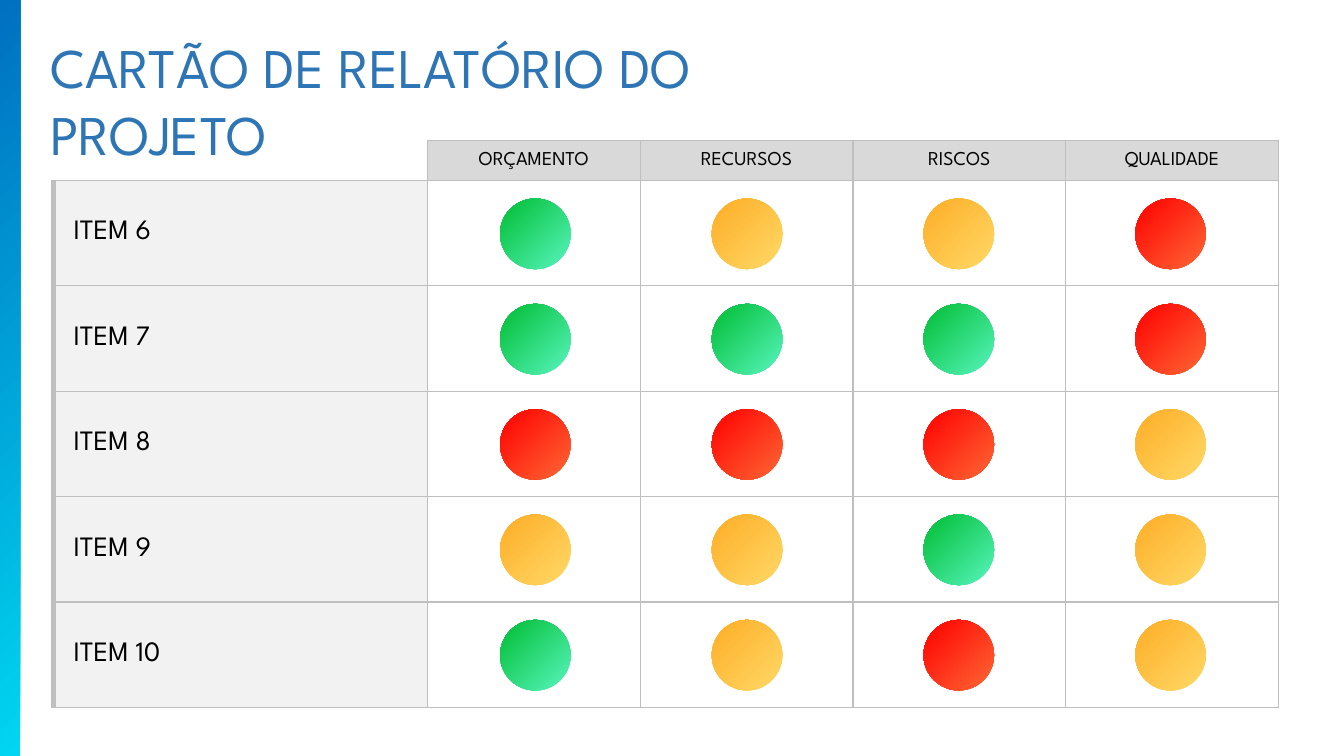
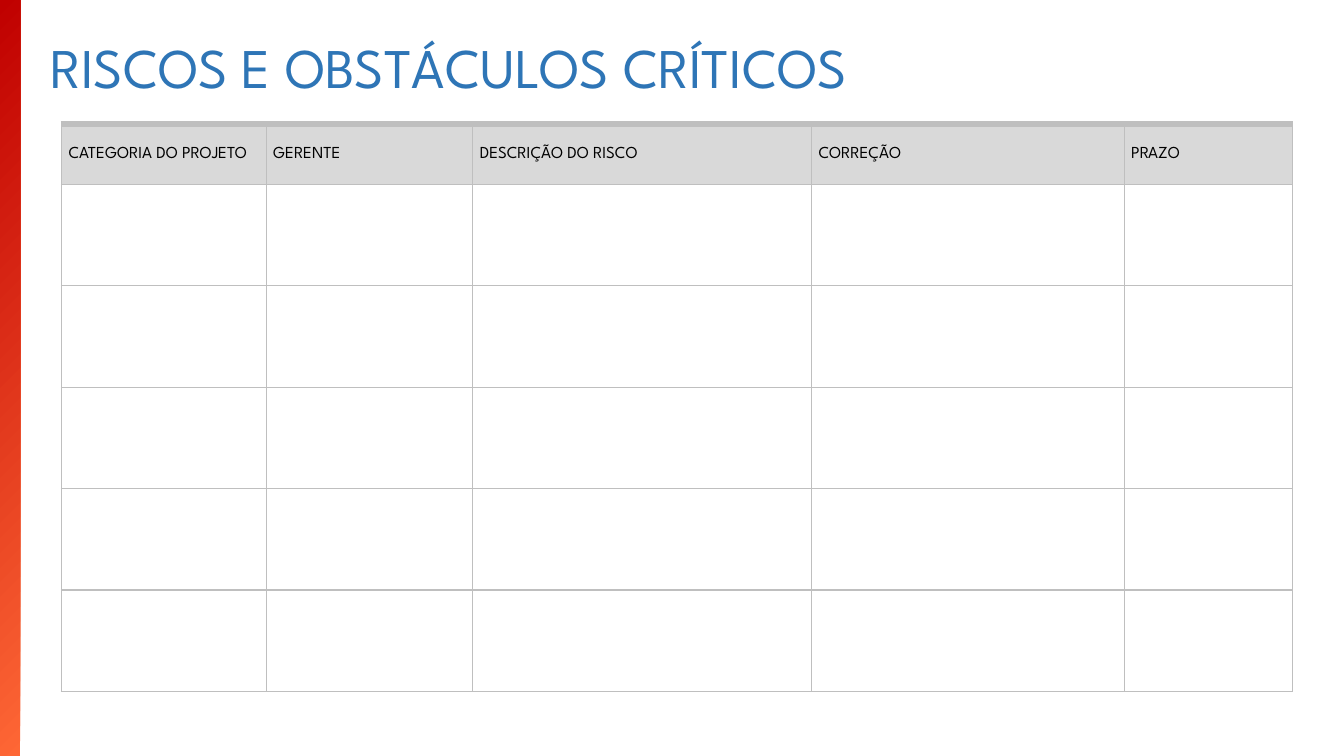
from dataclasses import dataclass
from typing import Optional

from lxml import etree
from pptx import Presentation
from pptx.dml.color import RGBColor
from pptx.enum.shapes import MSO_SHAPE
from pptx.enum.text import MSO_ANCHOR, PP_ALIGN
from pptx.oxml.ns import qn
from pptx.presentation import Presentation as Deck
from pptx.slide import Slide
from pptx.table import Table, _Cell
from pptx.util import Inches, Pt

RECTANGLE, OVAL = MSO_SHAPE.RECTANGLE, MSO_SHAPE.OVAL
LEFT, CENTER = PP_ALIGN.LEFT, PP_ALIGN.CENTER
MIDDLE = MSO_ANCHOR.MIDDLE


@dataclass(frozen=True)
class Gradient:
    start: str
    end: str


@dataclass(frozen=True)
class Theme:
    font: str = "League Spartan"
    title_color: str = "2E75B6"
    text_color: str = "000000"
    border: str = "BFBFBF"
    header_fill: str = "D9D9D9"
    item_fill: str = "F2F2F2"
    body_fill: str = "FFFFFF"
    title_size: int = 40
    item_size: int = 20
    score_header_size: int = 14
    risk_header_size: int = 12
    thin: float = 1
    thick: float = 4.5
    blue_band: Gradient = Gradient("00D6F1", "0070C0")
    red_band: Gradient = Gradient("FE6735", "C00000")
    green: Gradient = Gradient("58F5BE", "00BD32")
    amber: Gradient = Gradient("FFD966", "FEAD27")
    red: Gradient = Gradient("FE6735", "FF0000")


THEME = Theme()


@dataclass(frozen=True)
class Box:
    left: float
    top: float
    width: float
    height: float


@dataclass(frozen=True)
class CellStyle:
    fill: Optional[str] = THEME.body_fill
    size: int = THEME.item_size
    align: PP_ALIGN = LEFT
    inset_left: float = 0.06
    inset_right: float = 0.06
    left: float = THEME.thin
    right: float = THEME.thin
    top: float = THEME.thin
    bottom: float = THEME.thin


BODY_CELL = CellStyle()
CORNER_CELL = CellStyle(fill=None, left=0, top=0)
ITEM_CELL = CellStyle(fill=THEME.item_fill, inset_left=0.2, left=THEME.thick)
SCORE_HEADER = CellStyle(fill=THEME.header_fill, size=THEME.score_header_size, align=CENTER)
RISK_HEADER = CellStyle(fill=THEME.header_fill, size=THEME.risk_header_size,
                        inset_left=0.07, inset_right=0.07, top=THEME.thick)

SCORE_HEADINGS = ("ORÇAMENTO", "RECURSOS", "RISCOS", "QUALIDADE")
SCORES = (
    ("ITEM 6", "GAAR"),
    ("ITEM 7", "GGGR"),
    ("ITEM 8", "RRRA"),
    ("ITEM 9", "AAGA"),
    ("ITEM 10", "GARA"),
)
STATUS_FILLS = {"G": THEME.green, "A": THEME.amber, "R": THEME.red}
SCORE_BOX = Box(0.53, 1.39, 12.15, 5.63)
SCORE_WIDTHS = (3.71,) + (2.11,) * len(SCORE_HEADINGS)
DOT_SIZE = 0.7
DOT_LEFT, DOT_COLUMN_STEP = 4.96, 2.1
DOT_TOP, LAST_DOT_TOP = 1.97, 6.15

RISK_COLUMNS = (
    ("CATEGORIA DO PROJETO", 2.03),
    ("GERENTE", 2.05),
    ("DESCRIÇÃO DO RISCO", 3.36),
    ("CORREÇÃO", 3.1),
    ("PRAZO", 1.67),
)
RISK_BOX = Box(0.61, 1.23, 12.21, 5.63)
RISK_ROWS = 5


def add_gradient_shape(slide: Slide, kind: MSO_SHAPE, box: Box, gradient: Gradient) -> None:
    shape = slide.shapes.add_shape(kind, Inches(box.left), Inches(box.top),
                                   Inches(box.width), Inches(box.height))
    shape.shadow.inherit = False
    shape.line.fill.background()
    shape.fill.gradient()
    shape.fill.gradient_angle = 135
    for stop, color in zip(shape.fill.gradient_stops, (gradient.start, gradient.end)):
        stop.color.rgb = RGBColor.from_string(color)


def format_runs(paragraph, size: int, color: str) -> None:
    for run in paragraph.runs:
        run.font.name = THEME.font
        run.font.size = Pt(size)
        run.font.color.rgb = RGBColor.from_string(color)


def add_title(slide: Slide, text: str, width: float) -> None:
    title = slide.shapes.add_textbox(Inches(0.4), Inches(0.27), Inches(width), Inches(0.77))
    title.text_frame.word_wrap = True
    title.text_frame.text = text
    format_runs(title.text_frame.paragraphs[0], THEME.title_size, THEME.title_color)


def add_titled_slide(presentation: Deck, title: str, title_width: float, band: Gradient) -> Slide:
    slide = presentation.slides.add_slide(presentation.slide_layouts[6])
    add_gradient_shape(slide, RECTANGLE, Box(0, 0, 0.2, 7.5), band)
    add_title(slide, title, title_width)
    return slide


def add_border(cell: _Cell, tag: str, width: float) -> None:
    """Draw one cell edge; a zero width hides it."""
    line = etree.SubElement(cell._tc.get_or_add_tcPr(), qn(tag), w=str(Pt(width)))
    if width:
        fill = etree.SubElement(line, qn("a:solidFill"))
        etree.SubElement(fill, qn("a:srgbClr"), val=THEME.border)
    else:
        etree.SubElement(line, qn("a:noFill"))


def fill_cell(cell: _Cell, style: CellStyle, text: str = "") -> None:
    edges = (("a:lnL", style.left), ("a:lnR", style.right),
             ("a:lnT", style.top), ("a:lnB", style.bottom))
    for tag, width in edges:
        add_border(cell, tag, width)
    if style.fill:
        cell.fill.solid()
        cell.fill.fore_color.rgb = RGBColor.from_string(style.fill)
    else:
        cell.fill.background()
    cell.vertical_anchor = MIDDLE
    cell.margin_left = Inches(style.inset_left)
    cell.margin_right = Inches(style.inset_right)
    cell.margin_top = cell.margin_bottom = Inches(0)
    if text:
        cell.text_frame.text = text
        paragraph = cell.text_frame.paragraphs[0]
        paragraph.alignment = style.align
        format_runs(paragraph, style.size, THEME.text_color)


def add_grid(slide: Slide, box: Box, widths: tuple[float, ...],
             header_height: float, body_rows: int) -> Table:
    """Add an unstyled table whose body rows share the height below the header."""
    frame = slide.shapes.add_table(body_rows + 1, len(widths), Inches(box.left),
                                   Inches(box.top), Inches(box.width), Inches(box.height))
    table = frame.table
    table.first_row = table.horz_banding = False
    for column, width in zip(table.columns, widths):
        column.width = Inches(width)
    body_height = (box.height - header_height) / body_rows
    for index, row in enumerate(table.rows):
        row.height = Inches(body_height if index else header_height)
    return table


def build_report_card(presentation: Deck) -> None:
    slide = add_titled_slide(presentation, "CARTÃO DE RELATÓRIO DO PROJETO", 6.61,
                             THEME.blue_band)
    table = add_grid(slide, SCORE_BOX, SCORE_WIDTHS, 0.4, len(SCORES))
    fill_cell(table.cell(0, 0), CORNER_CELL)
    for column, heading in enumerate(SCORE_HEADINGS, start=1):
        fill_cell(table.cell(0, column), SCORE_HEADER, heading)
    row_step = (LAST_DOT_TOP - DOT_TOP) / (len(SCORES) - 1)
    for row, (item, statuses) in enumerate(SCORES):
        fill_cell(table.cell(row + 1, 0), ITEM_CELL, item)
        for column, status in enumerate(statuses):
            fill_cell(table.cell(row + 1, column + 1), BODY_CELL)
            dot = Box(DOT_LEFT + column * DOT_COLUMN_STEP, DOT_TOP + row * row_step,
                      DOT_SIZE, DOT_SIZE)
            add_gradient_shape(slide, OVAL, dot, STATUS_FILLS[status])


def build_risks(presentation: Deck) -> None:
    slide = add_titled_slide(presentation, "RISCOS E OBSTÁCULOS CRÍTICOS", 9.49,
                             THEME.red_band)
    widths = tuple(width for _, width in RISK_COLUMNS)
    table = add_grid(slide, RISK_BOX, widths, 0.6, RISK_ROWS)
    for column, (heading, _) in enumerate(RISK_COLUMNS):
        fill_cell(table.cell(0, column), RISK_HEADER, heading)
        for row in range(1, RISK_ROWS + 1):
            fill_cell(table.cell(row, column), BODY_CELL)


def main() -> None:
    presentation = Presentation()
    presentation.slide_width = Inches(13.33)
    presentation.slide_height = Inches(7.5)
    build_report_card(presentation)
    build_risks(presentation)
    presentation.save("out.pptx")


if __name__ == "__main__":
    main()
